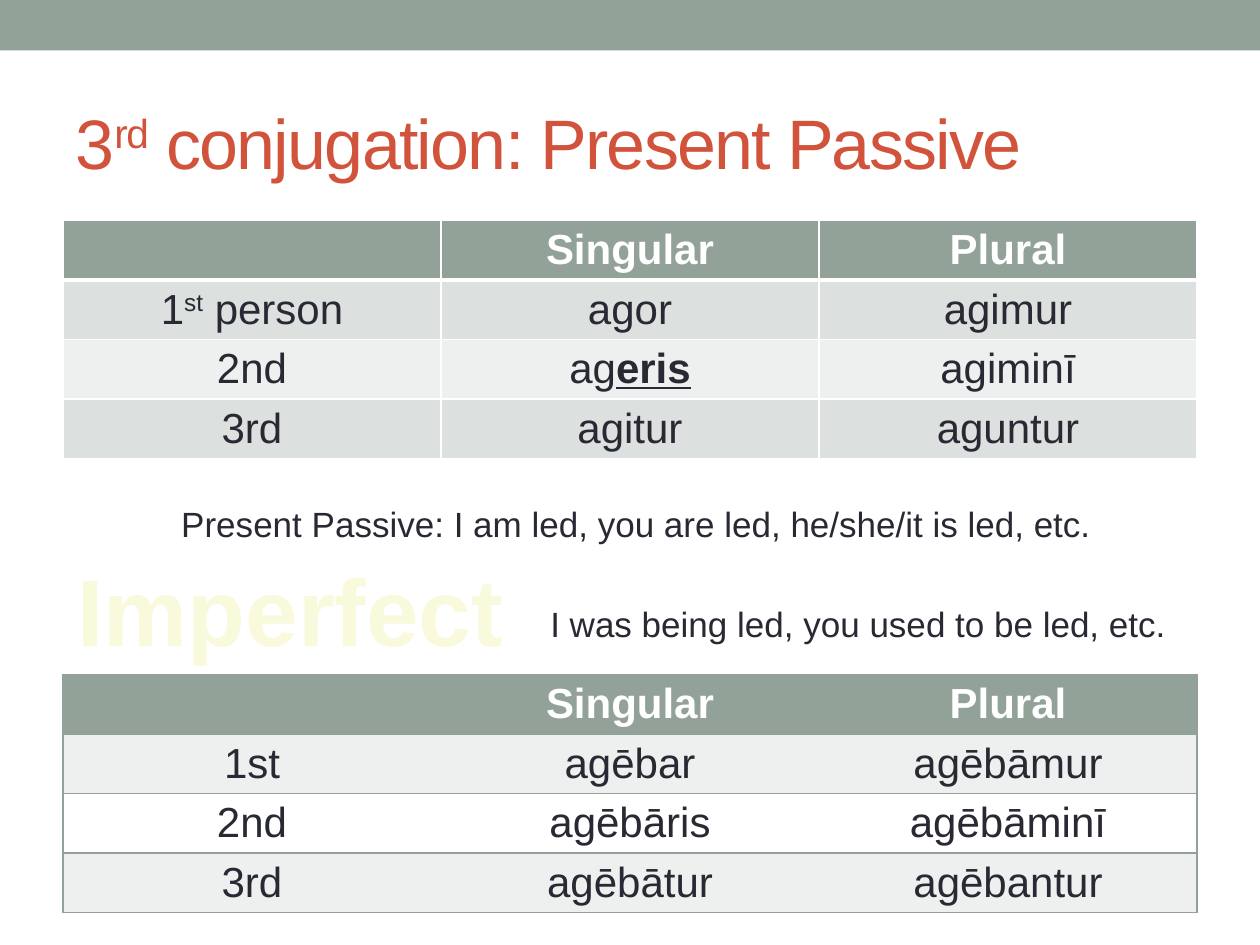
from lxml import etree
from pptx import Presentation
from pptx.dml.color import RGBColor
from pptx.enum import shapes, text
from pptx.oxml.ns import qn
from pptx.util import Pt

SAGE, RED, DARK, WHITE, PALE = "93A299", "D2533C", "292934", "FFFFFF", "EEF0EF"
SUPER = {"baseline": "30000"}
STRONG = {"b": "1", "u": "sng"}


def add_runs(p, runs, size, color, bold=False, **xml):
    """Write plain text, or a list of (text, run attributes) pairs."""
    for words, extra in [(runs, {})] if isinstance(runs, str) else runs:
        r = p.add_run()
        r.text = words
        for name, value in {"name": "Arial", "size": Pt(size), "bold": bold}.items():
            setattr(r.font, name, value)
        r.font.color.rgb = RGBColor.from_string(color)
        for name, value in {**xml, **extra}.items():
            r.font._element.set(name, value)


def set_border(cell, side, color, width):
    """Draw one cell side; no colour means no line."""
    ln = etree.SubElement(cell._tc.get_or_add_tcPr(), qn("a:ln" + side), w=str(Pt(width)))
    if color:
        fill = etree.SubElement(ln, qn("a:solidFill"))
        etree.SubElement(fill, qn("a:srgbClr"), val=color)
    else:
        etree.SubElement(ln, qn("a:noFill"))


prs = Presentation()
prs.slide_width, prs.slide_height = Pt(720), Pt(540)
s = prs.slides.add_slide(prs.slide_layouts[5])

# Top band
sp = s.shapes.add_shape(shapes.MSO_SHAPE.RECTANGLE, 0, 0, Pt(720), Pt(28.8))
sp.shadow.inherit = False
sp.fill.solid()
sp.fill.fore_color.rgb = RGBColor.from_string(SAGE)
sp.line.fill.background()

# Title
title = s.shapes.title
for name, value in {"left": 36, "top": 41.8, "width": 648, "height": 77.8}.items():
    setattr(title, name, Pt(value))
tf = title.text_frame
tf.auto_size = text.MSO_AUTO_SIZE.NONE
tf.vertical_anchor = text.MSO_ANCHOR.MIDDLE
tf.paragraphs[0].alignment = text.PP_ALIGN.LEFT
add_runs(tf.paragraphs[0], [("3", {}), ("rd", SUPER), (" conjugation: Present Passive", {})],
         40, RED, spc="-100")

# Conjugation tables: top, row fills, grid style, rows
header = ["", "Singular", "Plural"]
present = [
    header,
    [[("1", {}), ("st", SUPER), (" person", {})], "agor", "agimur"],
    ["2nd", [("ag", {}), ("eris", STRONG)], "agiminī"],
    ["3rd", "agitur", "aguntur"],
]
imperfect = [
    header,
    ["1st", "agēbar", "agēbāmur"],
    ["2nd", "agēbāris", "agēbāminī"],
    ["3rd", "agēbātur", "agēbantur"],
]
for top, bands, full_grid, rows in [
    (126, ["DCE0DE", PALE], True, present),
    (385.5, [PALE, WHITE], False, imperfect),
]:
    table = s.shapes.add_table(4, 3, Pt(36), Pt(top), Pt(648), Pt(136)).table
    for i, row in enumerate(rows):
        table.rows[i].height = Pt(34)
        for j, runs in enumerate(row):
            cell = table.cell(i, j)
            line = WHITE if full_grid else SAGE
            heavy = full_grid and i == 0
            set_border(cell, "L", line if full_grid or j == 0 else None, 1)
            set_border(cell, "R", line if full_grid or j == 2 else None, 1)
            set_border(cell, "T", line, 3 if full_grid and i == 1 else 1)
            set_border(cell, "B", line, 3 if heavy else 1)
            cell.fill.solid()
            cell.fill.fore_color.rgb = RGBColor.from_string(bands[(i - 1) % 2] if i else SAGE)
            p = cell.text_frame.paragraphs[0]
            p.alignment = text.PP_ALIGN.CENTER
            if runs:
                add_runs(p, runs, 24, DARK if i else WHITE, bold=i == 0)

# Translations and the second heading
for words, left, top, width, height, size, color, bold in [
    ("Present Passive: I am led, you are led, he/she/it is led, etc.",
     96.5, 283.7, 573.8, 31.7, 20, DARK, False),
    ("I was being led, you used to be led, etc.", 307.4, 340.6, 376.6, 31.7, 20, DARK, False),
    ("Imperfect", 36, 312, 260, 69.5, 54, "F9F9DC", True),
]:
    tf = s.shapes.add_textbox(Pt(left), Pt(top), Pt(width), Pt(height)).text_frame
    tf.word_wrap = True
    if bold:
        tf.paragraphs[0].alignment = text.PP_ALIGN.CENTER
    add_runs(tf.paragraphs[0], words, size, color, bold)

prs.save("out.pptx")
